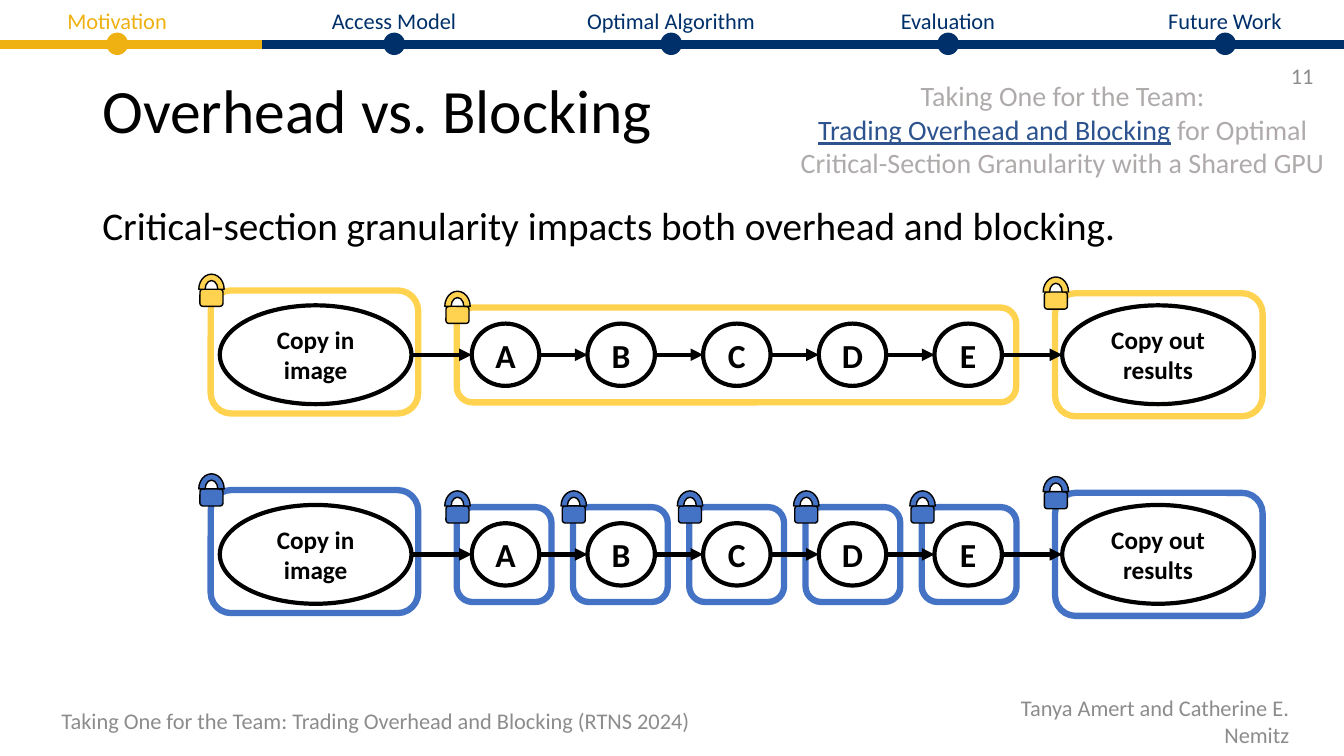
import pptx
import pptx.util
import pptx.dml.color
import pptx.enum.shapes
import pptx.enum.text
import pptx.oxml.ns
import lxml.etree

Cm = pptx.util.Cm
Pt = pptx.util.Pt
KIND = pptx.enum.shapes.MSO_SHAPE
ALIGN = pptx.enum.text.PP_ALIGN
ANCHOR = pptx.enum.text.MSO_ANCHOR

BLACK, GRAY, PALE = "000000", "8C8C8C", "AFABAB"
NAVY, GOLD = "003069", "EEB111"
YELLOW, BLUE, LINK = "FFD24F", "4472C4", "2D538F"
WIDE, HIGH = 33.87, 19.05
STEPS = "ABCDE"


def paint(target, color):
    target.rgb = pptx.dml.color.RGBColor.from_string(color)


def write(para, text, size, color, bold=False, under=False):
    run = para.add_run()
    run.text = text
    font = run.font
    font.name = "Calibri"
    font.size = Pt(size)
    font.bold = bold
    font.underline = under
    paint(font.color, color)


def label(slide, box, lines, size, align=ALIGN.LEFT, anchor=ANCHOR.MIDDLE, space=None, before=0):
    frame = slide.shapes.add_textbox(*map(Cm, box)).text_frame
    frame.word_wrap = True
    frame.vertical_anchor = anchor
    for num, line in enumerate(lines):
        para = frame.add_paragraph() if num else frame.paragraphs[0]
        para.alignment = align
        para.line_spacing = space
        para.space_before = Pt(before)
        for text, color, under in line:
            write(para, text, size, color, under=under)


def plain(slide, box, text, size, color, **style):
    label(slide, box, [[(text, color, False)]], size, **style)


def figure(slide, kind, box, stroke, width, fill=None):
    shape = slide.shapes.add_shape(kind, *map(Cm, box))
    shape.shadow.inherit = False
    if fill:
        shape.fill.solid()
        paint(shape.fill.fore_color, fill)
    else:
        shape.fill.background()
    paint(shape.line.color, stroke)
    shape.line.width = Pt(width)
    return shape


def stroke(slide, left, right, y, color, width, arrow=False):
    line = slide.shapes.add_connector(
        pptx.enum.shapes.MSO_CONNECTOR.STRAIGHT, Cm(left), Cm(y), Cm(right), Cm(y))
    paint(line.line.color, color)
    line.line.width = Pt(width)
    props = line.element.spPr
    name = pptx.oxml.ns.qn
    if arrow:
        tip = lxml.etree.SubElement(props.get_or_add_ln(), name("a:tailEnd"))
        tip.set("type", "triangle")
    lxml.etree.SubElement(props, name("a:effectLst"))


def node(slide, box, text, size):
    shape = figure(slide, KIND.OVAL, box, BLACK, 3)
    frame = shape.text_frame
    frame.word_wrap = True
    frame.vertical_anchor = ANCHOR.MIDDLE
    para = frame.paragraphs[0]
    para.alignment = ALIGN.CENTER
    write(para, text, size, BLACK, bold=True)


def locked(slide, left, top, width, height, color):
    figure(slide, KIND.ROUNDED_RECTANGLE, (left, top, width, height), color, 4.5)
    figure(slide, KIND.ROUNDED_RECTANGLE, (left - 0.27, top - 0.03, 0.58, 0.43), BLACK, 1, color)
    figure(slide, KIND.BLOCK_ARC, (left - 0.3, top - 0.41, 0.64, 0.76), BLACK, 1, color)


def chain(slide, mid, color, split):
    locked(slide, 5.31, mid - 1.62, 5.23, 3.1, color)
    locked(slide, 26.59, mid - 1.55, 5.23, 3.1, color)
    if split:
        for num in range(len(STEPS)):
            locked(slide, 11.51 + 2.93 * num, mid - 1.19, 2.39, 2.39, color)
    else:
        locked(slide, 11.51, mid - 1.19, 14.1, 2.39, color)

    spots = [(5.54, 4.83, 2.49, "Copy in image", 18)]
    spots += [(11.89 + 2.915 * num, 1.7, 1.57, step, 24) for num, step in enumerate(STEPS)]
    spots.append((26.77, 4.83, 2.49, "Copy out results", 18))
    for left, width, height, text, size in spots:
        node(slide, (left, mid - height / 2, width, height), text, size)
    for start, end in zip(spots, spots[1:]):
        stroke(slide, start[0] + start[1], end[0], mid, BLACK, 3, arrow=True)


def tracker(slide):
    stroke(slide, 0, WIDE, 1.12, NAVY, 6)
    stroke(slide, 0, 6.6, 1.12, GOLD, 6)
    parts = ["Motivation", "Access Model", "Optimal Algorithm", "Evaluation", "Future Work"]
    for num, part in enumerate(parts):
        color = NAVY if num else GOLD
        mid = 2.95 + 6.98 * num
        plain(slide, (mid - 2.7, 0.05, 5.4, 0.94), part, 16, color,
              align=ALIGN.CENTER, anchor=ANCHOR.TOP)
        figure(slide, KIND.OVAL, (mid - 0.25, 0.84, 0.51, 0.53), color, 1, color)


def main():
    deck = pptx.Presentation()
    deck.slide_width, deck.slide_height = Cm(WIDE), Cm(HIGH)
    slide = deck.slides.add_slide(deck.slide_layouts[6])

    plain(slide, (23.94, 17.65, 8.8, 1.02), "Tanya Amert and Catherine E. Nemitz",
          16, GRAY, align=ALIGN.RIGHT)
    plain(slide, (1.3, 17.65, 16.76, 1.02),
          "Taking One for the Team: Trading Overhead and Blocking (RTNS 2024)", 16, GRAY)
    plain(slide, (2.33, 1.02, 29.21, 3.68), "Overhead vs. Blocking", 44, BLACK, space=0.9)
    plain(slide, (2.33, 5.08, 29.21, 12.09),
          "Critical-section granularity impacts both overhead and blocking.",
          28, BLACK, anchor=ANCHOR.TOP, space=0.9, before=10)
    plain(slide, (25.73, 1.4, 7.62, 1.02), "11", 16, GRAY, align=ALIGN.RIGHT)
    label(slide, (19.86, 1.68, 13.84, 3.15), [
        [("Taking One for the Team:", PALE, False)],
        [("Trading Overhead and Blocking", LINK, True), (" for Optimal", PALE, False)],
        [("Critical-Section Granularity with a Shared GPU", PALE, False)],
    ], 20, align=ALIGN.CENTER)

    chain(slide, 8.94, YELLOW, split=False)
    chain(slide, 13.97, BLUE, split=True)
    tracker(slide)
    deck.save("out.pptx")


if __name__ == "__main__":
    main()
